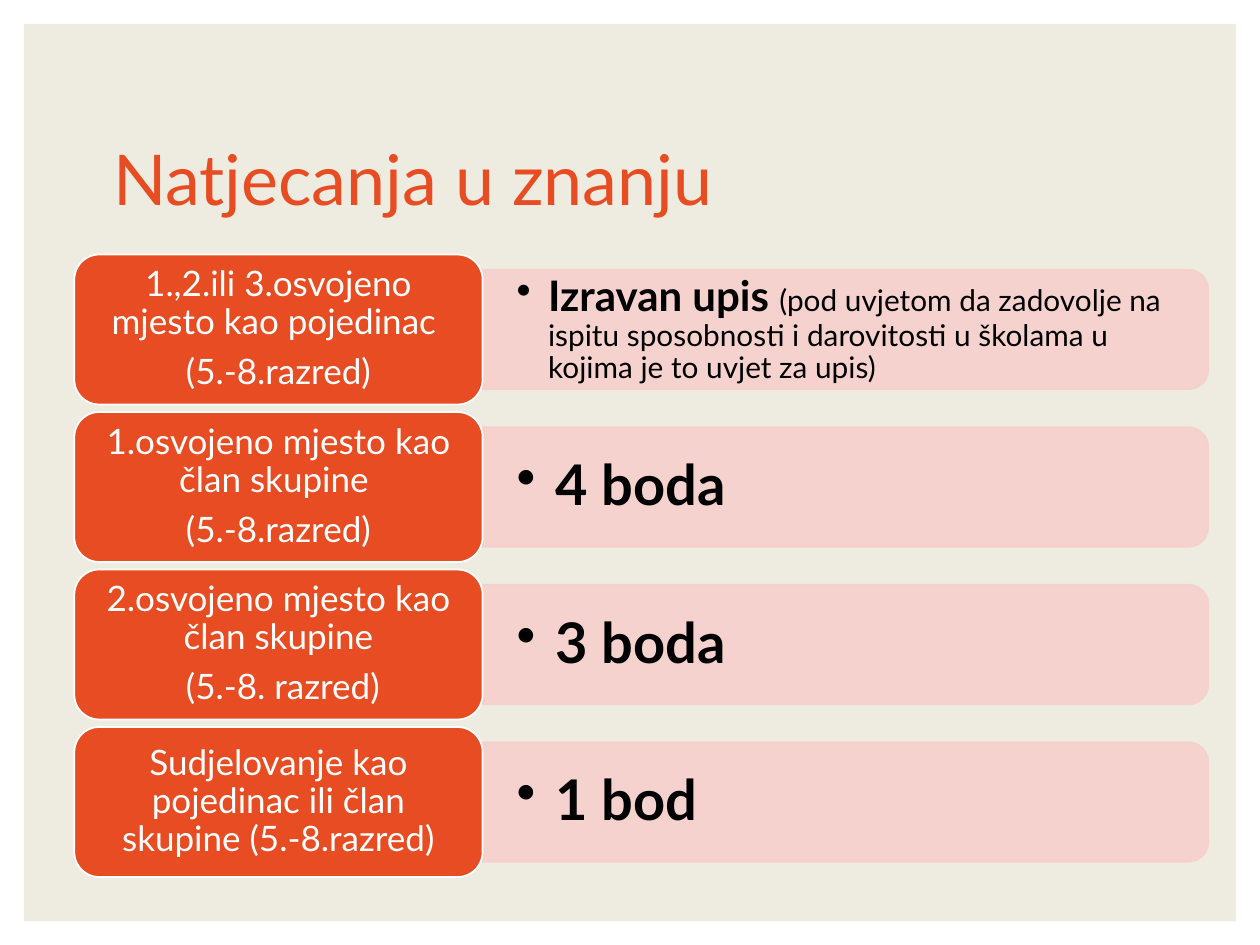
from lxml.etree import SubElement
from pptx import Presentation
from pptx.dml.color import RGBColor
from pptx.enum.shapes import MSO_SHAPE as SHAPE
from pptx.enum.text import MSO_ANCHOR as ANCHOR, PP_ALIGN as ALIGN
from pptx.oxml.ns import qn
from pptx.util import Inches, Pt

ORANGE, PINK, CREAM = "E84C22", "F6D0CD", "EEECE1"
WHITE, BLACK = "FFFFFF", "000000"


def rgb(color):
    return RGBColor.from_string(color)


def set_alpha(fill_format, percent):
    """Make a solid fill partly transparent."""
    clr = fill_format._xPr.find(qn("a:solidFill"))[0]
    SubElement(clr, qn("a:alpha"), val=str(percent * 1000))


class SlideBuilder:
    font = "Lato"
    line_spacing = 0.9

    def __init__(self, slide):
        self.s = slide

    def box(self, kind, x, y, w, h, fill, line=None, alpha=None):
        sp = self.s.shapes.add_shape(kind, Inches(x), Inches(y), Inches(w), Inches(h))
        sp.shadow.inherit = False
        sp.fill.solid()
        sp.fill.fore_color.rgb = rgb(fill)
        if line:
            sp.line.color.rgb = rgb(line)
            sp.line.width = Pt(1)
        else:
            sp.line.fill.background()
        if alpha:
            set_alpha(sp.fill, alpha)
            set_alpha(sp.line.fill, alpha)
        return sp

    def text(self, x, y, w, h, paragraphs, color, inset=(0.1, 0.05),
             align=ALIGN.LEFT, after=0, bullet_indent=None):
        """Each paragraph is a list of (text, size, bold) runs."""
        tf = self.s.shapes.add_textbox(Inches(x), Inches(y), Inches(w), Inches(h)).text_frame
        tf.word_wrap = True
        tf.vertical_anchor = ANCHOR.MIDDLE
        tf.margin_left = tf.margin_right = Inches(inset[0])
        tf.margin_top = tf.margin_bottom = Inches(inset[1])
        for i, runs in enumerate(paragraphs):
            p = tf.add_paragraph() if i else tf.paragraphs[0]
            p.alignment = align
            p.line_spacing = self.line_spacing
            p.space_after = Pt(after)
            if bullet_indent:
                self.bullet(p, bullet_indent)
            for words, size, bold in runs:
                r = p.add_run()
                r.text = words
                r.font.name = self.font
                r.font.size = Pt(size)
                r.font.bold = bold
                r.font.color.rgb = rgb(color)

    def bullet(self, p, indent):
        p.level = 1
        pPr = p._p.get_or_add_pPr()
        pPr.set("marL", str(Inches(indent)))
        pPr.set("indent", str(-Inches(indent)))
        SubElement(pPr, qn("a:buChar"), char="•")

    def result_bar(self, y, runs, indent):
        # The bar is a tall shape turned on its side, so its rounded corners face right.
        x, w, h = 3.83, 5.76, 0.95
        sp = self.box(SHAPE.ROUND_2_SAME_RECTANGLE, x + (w - h) / 2, y + (h - w) / 2,
                      h, w, PINK, PINK, alpha=90)
        sp.rotation = 90
        self.text(x, y + 0.05, 5.71, 0.86, [runs], BLACK, (0.27, 0.14),
                  after=3, bullet_indent=indent)

    def label_card(self, y, lines):
        x, w, h, pad = 0.59, 3.24, 1.19, 0.06
        self.box(SHAPE.ROUNDED_RECTANGLE, x, y, w, h, ORANGE, WHITE)
        self.text(x + pad, y + pad, w - 2 * pad, h - 2 * pad,
                  [[(line, 20, False)] for line in lines], WHITE, (0.08, 0.04),
                  align=ALIGN.CENTER, after=7)


ROWS = [
    (["1.,2.ili 3.osvojeno mjesto kao pojedinac ", "(5.-8.razred)"],
     [("Izravan upis ", 24, True),
      ("(pod uvjetom da zadovolje na ispitu sposobnosti i darovitosti u školama "
       "u kojima je to uvjet za upis)", 17, False)], 0.25),
    (["1.osvojeno mjesto kao član skupine ", "(5.-8.razred)"],
     [("4 boda", 32, True)], 0.31),
    (["2.osvojeno mjesto kao član skupine", " (5.-8. razred)"],
     [("3 boda", 32, True)], 0.31),
    (["Sudjelovanje kao pojedinac ili član skupine (5.-8.razred)"],
     [("1 bod", 32, True)], 0.31),
]
TOP, PITCH = 2.02, 1.25


def main():
    prs = Presentation()
    prs.slide_width, prs.slide_height = Inches(10), Inches(7.5)
    s = prs.slides.add_slide(prs.slide_layouts[6])
    s.background.fill.solid()
    s.background.fill.fore_color.rgb = rgb(WHITE)

    b = SlideBuilder(s)
    b.box(SHAPE.RECTANGLE, 0.19, 0.19, 9.62, 7.12, CREAM)
    b.text(0.8, 0.7, 8.4, 1.5, [[("Natjecanja u znanju", 40, False)]], ORANGE)
    for i, (label, result, indent) in enumerate(ROWS):
        y = TOP + i * PITCH
        b.result_bar(y + 0.12, result, indent)
        b.label_card(y, label)
    prs.save("out.pptx")


if __name__ == "__main__":
    main()
